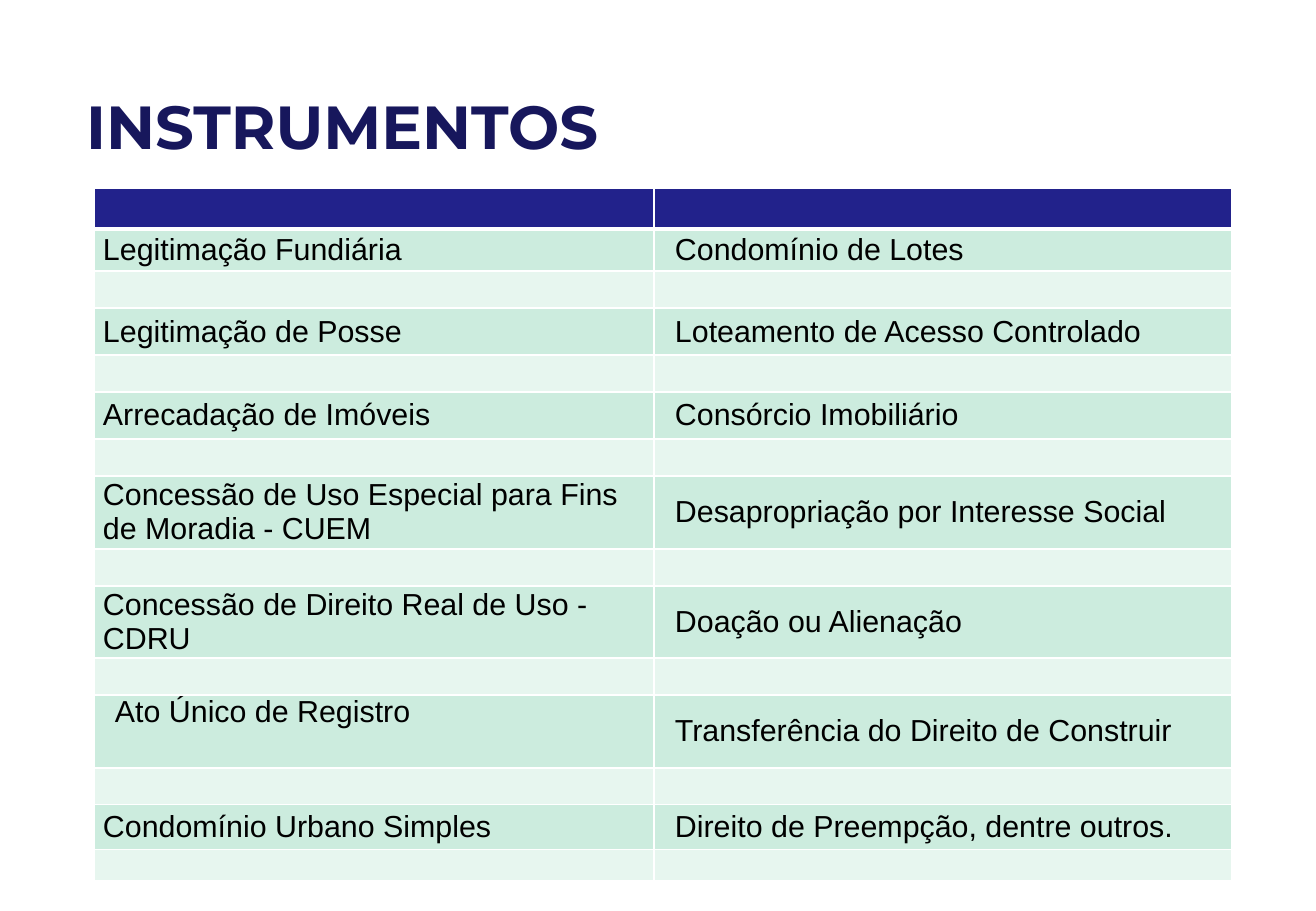
from lxml import etree
from pptx import Presentation
from pptx.dml.color import RGBColor
from pptx.enum.text import MSO_ANCHOR, MSO_AUTO_SIZE, PP_ALIGN
from pptx.oxml.ns import qn
from pptx.util import Pt

EMU_PER_PX = 7526
LEFT = PP_ALIGN.LEFT
TOP, MIDDLE = MSO_ANCHOR.TOP, MSO_ANCHOR.MIDDLE
NO_FIT = MSO_AUTO_SIZE.NONE

COLORS = {
    "title": "17175C",
    "header": "22228B",
    "entry": "CCECDE",
    "gap": "E7F6EF",
    "border": "FFFFFF",
    "text": "000000",
}

TABLE_LEFT, TABLE_TOP = 94, 188
COLUMN_WIDTHS = (560, 578)
HEADER_HEIGHT, GAP_HEIGHT, LAST_GAP_HEIGHT = 41, 37, 31
CELL_INSET, INDENTED_INSET = 9, 21
INDENTED_ENTRY = "Ato Único de Registro"

# Row height, left entry, right entry
INSTRUMENTS = [
    (42, "Legitimação Fundiária", "Condomínio de Lotes"),
    (47, "Legitimação de Posse", "Loteamento de Acesso Controlado"),
    (47, "Arrecadação de Imóveis", "Consórcio Imobiliário"),
    (73, "Concessão de Uso Especial para Fins de Moradia - CUEM",
     "Desapropriação por Interesse Social"),
    (72, "Concessão de Direito Real de Uso - CDRU", "Doação ou Alienação"),
    (73, INDENTED_ENTRY, "Transferência do Direito de Construir"),
    (45, "Condomínio Urbano Simples", "Direito de Preempção, dentre outros."),
]


def px(length):
    return length * EMU_PER_PX


def color(name):
    return RGBColor.from_string(COLORS[name])


def add_span(para, text, font_name, size, color_name, bold=False):
    span = para.add_run()
    span.text = text
    span.font.name = font_name
    span.font.size = Pt(size)
    span.font.bold = bold
    span.font.color.rgb = color(color_name)


def add_title(page, text):
    box = page.shapes.title
    box.left, box.top, box.width, box.height = px(74), px(83), px(956), px(159)
    frame = box.text_frame
    frame.word_wrap = True
    frame.auto_size = NO_FIT
    frame.vertical_anchor = TOP
    para = frame.paragraphs[0]
    para.alignment = LEFT
    add_span(para, text, "Montserrat", 36, "title", bold=True)


def add_borders(cell, top_width=1, bottom_width=1):
    properties = cell._tc.get_or_add_tcPr()
    widths = {"lnL": 1, "lnR": 1, "lnT": top_width, "lnB": bottom_width}
    for side, width in widths.items():
        line = etree.SubElement(properties, qn(f"a:{side}"), w=str(Pt(width)))
        fill = etree.SubElement(line, qn("a:solidFill"))
        etree.SubElement(fill, qn("a:srgbClr"), val=COLORS["border"])


def fill_cell(cell, text, kind, indented):
    cell.fill.solid()
    cell.fill.fore_color.rgb = color(kind)
    cell.margin_left = px(INDENTED_INSET if indented else CELL_INSET)
    cell.margin_right = px(CELL_INSET)
    cell.margin_top = cell.margin_bottom = 0
    cell.vertical_anchor = TOP if text == INDENTED_ENTRY else MIDDLE
    para = cell.text_frame.paragraphs[0]
    if text:
        add_span(para, text, "Arial", 18, "text")
    else:
        # A small end mark keeps an empty row at its set height
        etree.SubElement(para._p, qn("a:endParaRPr"), sz="1000")


def table_rows():
    rows = [(HEADER_HEIGHT, "header", ("", ""))]
    for height, left, right in INSTRUMENTS:
        rows.append((height, "entry", (left, right)))
        rows.append((GAP_HEIGHT, "gap", ("", "")))
    rows[-1] = (LAST_GAP_HEIGHT, "gap", ("", ""))
    return rows


def add_instrument_table(page):
    rows = table_rows()
    total_height = sum(height for height, _, _ in rows)
    table = page.shapes.add_table(
        len(rows), len(COLUMN_WIDTHS), px(TABLE_LEFT), px(TABLE_TOP),
        px(sum(COLUMN_WIDTHS)), px(total_height)).table
    table.horz_banding = False
    for column, width in zip(table.columns, COLUMN_WIDTHS):
        column.width = px(width)
    for row_index, (height, kind, texts) in enumerate(rows):
        table.rows[row_index].height = px(height)
        for column_index, text in enumerate(texts):
            cell = table.cell(row_index, column_index)
            # A thick rule parts the header from the entries
            add_borders(cell, top_width=3 if row_index == 1 else 1,
                        bottom_width=3 if row_index == 0 else 1)
            indented = column_index == 1 or text == INDENTED_ENTRY
            fill_cell(cell, text, kind, indented)


def main():
    deck = Presentation()
    deck.slide_width, deck.slide_height = px(1316), px(911)
    page = deck.slides.add_slide(deck.slide_layouts[5])
    add_title(page, "INSTRUMENTOS")
    add_instrument_table(page)
    deck.save("out.pptx")


if __name__ == "__main__":
    main()
